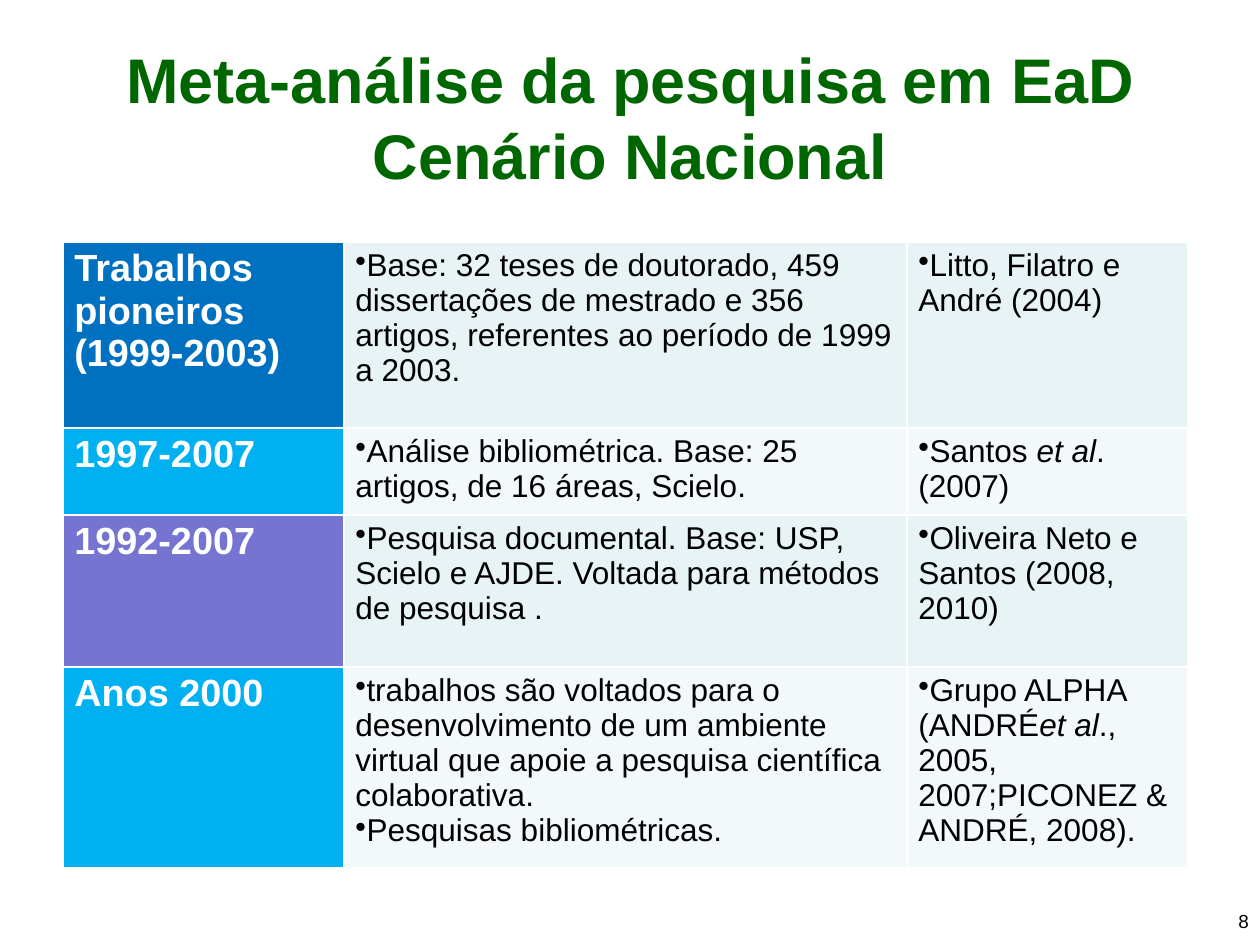
import pptx
import pptx.util
import pptx.dml.color
import pptx.enum.text
import pptx.oxml.ns
from lxml import etree

PX = 8064  # EMU per px
SLIDE = (1260, 945)
FONT = "Arial"
COLORS = {
    "title": "006600", "text": "000000", "white": "FFFFFF",
    "blue": "0070C0", "sky": "00B0F0", "violet": "7575D1",
    "band_dark": "E7F3F4", "band_light": "F3F9FA",
}
TITLE = "Meta-análise da pesquisa em EaD Cenário Nacional"
TITLE_BOX = (63, 37, 1134, 158)
PAGE_NUMBER = "8"
NUMBER_BOX = (966, 904, 294, 66)
ITALIC = "et al"

TABLE_ORIGIN = (63, 242)
COLUMN_WIDTHS = (281, 563, 281)
# height, heading colour, heading, research base, authors
ROWS = [
    (186, "blue", ["Trabalhos pioneiros", "(1999-2003)"],
     ["Base: 32 teses de doutorado, 459 dissertações de mestrado e 356 artigos, "
      "referentes ao período de 1999 a 2003."],
     ["Litto, Filatro e André (2004)"]),
    (82, "sky", ["1997-2007"],
     ["Análise bibliométrica. Base: 25 artigos, de 16 áreas, Scielo."],
     ["Santos et al. (2007)"]),
    (152, "violet", ["1992-2007"],
     ["Pesquisa documental. Base: USP, Scielo e AJDE. Voltada para métodos de pesquisa ."],
     ["Oliveira Neto e Santos (2008, 2010)"]),
    (186, "sky", ["Anos 2000"],
     ["trabalhos são voltados para o desenvolvimento de um ambiente virtual "
      "que apoie a pesquisa científica colaborativa.",
      "Pesquisas bibliométricas."],
     ["Grupo ALPHA (ANDRÉet al., 2005, 2007;PICONEZ & ANDRÉ, 2008)."]),
]


def rgb(name):
    return pptx.dml.color.RGBColor.from_string(COLORS[name])


def px(lengths):
    return [length * PX for length in lengths]


def style(span, size, color, bold=False, italic=False):
    span.font.name = FONT
    span.font.size = pptx.util.Pt(size)
    span.font.color.rgb = rgb(color)
    span.font.bold = bold
    span.font.italic = italic


def add_text(page, place, text, size, color, bold, align, anchor):
    box = page.shapes.add_textbox(*px(place))
    frame = box.text_frame
    frame.word_wrap = True
    frame.vertical_anchor = anchor
    frame.text = text
    para = frame.paragraphs[0]
    para.alignment = align
    style(para.runs[0], size, color, bold)


def add_bullet(para):
    properties = para._p.get_or_add_pPr()
    properties.set("marL", "0")
    properties.set("indent", "0")
    bullet = etree.SubElement(properties, pptx.oxml.ns.qn("a:buChar"))
    bullet.set("char", "•")


def add_borders(cell):
    properties = cell._tc.get_or_add_tcPr()
    for side in ("lnL", "lnR", "lnT", "lnB"):
        line = etree.SubElement(properties, pptx.oxml.ns.qn("a:" + side), w="12700")
        fill = etree.SubElement(line, pptx.oxml.ns.qn("a:solidFill"))
        etree.SubElement(fill, pptx.oxml.ns.qn("a:srgbClr"), val=COLORS["white"])


def fill_cell(cell, lines, fill, heading):
    add_borders(cell)
    cell.fill.solid()
    cell.fill.fore_color.rgb = rgb(fill)
    frame = cell.text_frame
    for index, text in enumerate(lines):
        para = frame.add_paragraph() if index else frame.paragraphs[0]
        if not heading:
            add_bullet(para)
        for part in filter(None, text.partition(ITALIC)):
            span = para.add_run()
            span.text = part
            if heading:
                style(span, 24, "white", bold=True)
            else:
                style(span, 20, "text", italic=part == ITALIC)


def add_research_table(page):
    size = (sum(COLUMN_WIDTHS), sum(row[0] for row in ROWS))
    frame = page.shapes.add_table(len(ROWS), len(COLUMN_WIDTHS), *px(TABLE_ORIGIN + size))
    table = frame.table
    table.first_row = table.horz_banding = False
    for column, width in zip(table.columns, COLUMN_WIDTHS):
        column.width = width * PX
    for r, (height, heading_color, *cells) in enumerate(ROWS):
        table.rows[r].height = height * PX
        band = "band_light" if r % 2 else "band_dark"
        for c, lines in enumerate(cells):
            fill_cell(table.cell(r, c), lines, band if c else heading_color, c == 0)


def main():
    deck = pptx.Presentation()
    deck.slide_width, deck.slide_height = px(SLIDE)
    page = deck.slides.add_slide(deck.slide_layouts[6])
    align = pptx.enum.text.PP_ALIGN
    anchor = pptx.enum.text.MSO_ANCHOR
    add_text(page, NUMBER_BOX, PAGE_NUMBER, 12, "text", False, align.RIGHT, anchor.TOP)
    add_text(page, TITLE_BOX, TITLE, 40, "title", True, align.CENTER, anchor.MIDDLE)
    add_research_table(page)
    deck.save("out.pptx")


if __name__ == "__main__":
    main()
